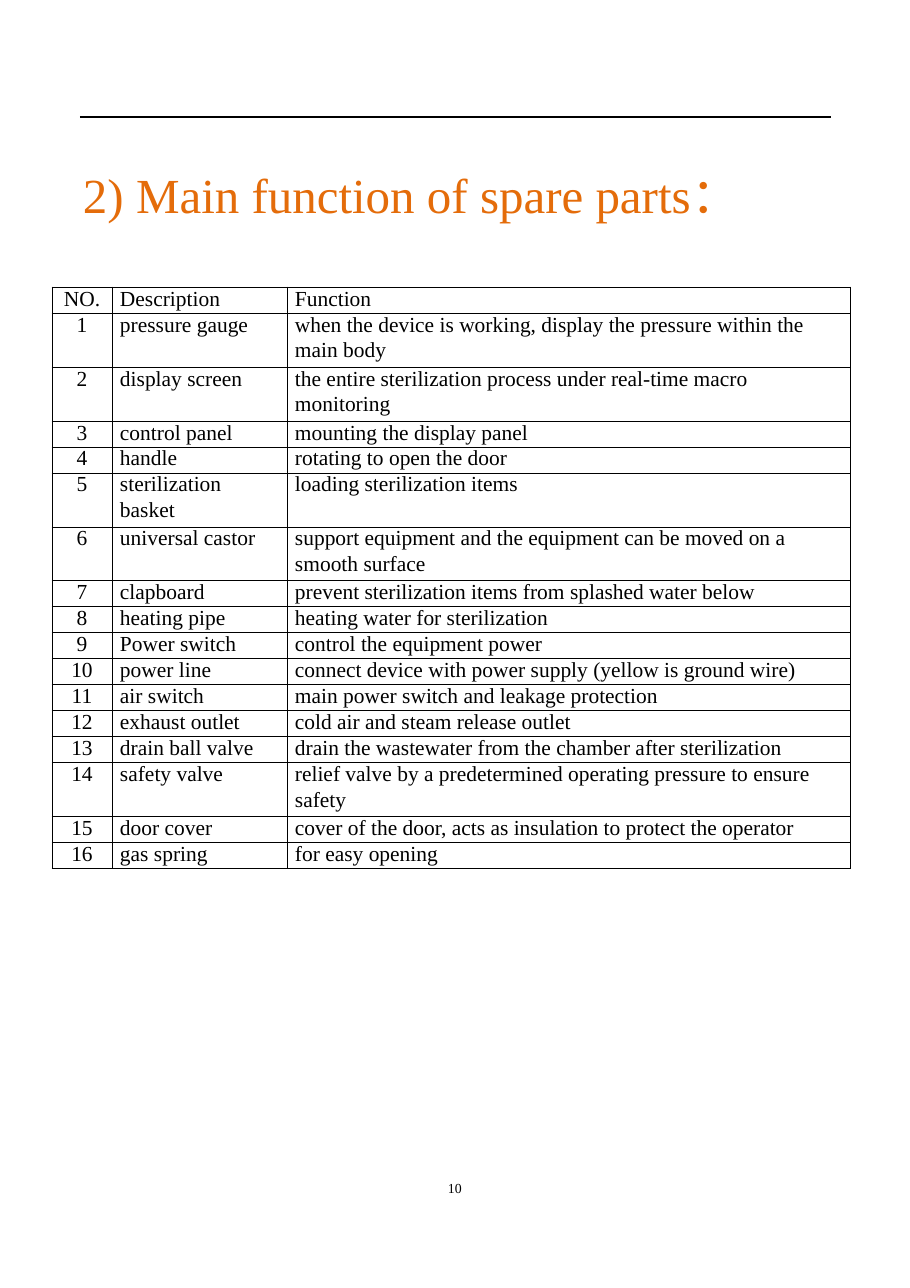
from dataclasses import dataclass
from lxml import etree
from pptx import Presentation
from pptx import util as u
from pptx.dml.color import RGBColor
from pptx.enum import shapes, text
from pptx.oxml.ns import qn


@dataclass(frozen=True)
class Theme:
    ink: RGBColor = RGBColor(0, 0, 0)
    accent: RGBColor = RGBColor(0xE4, 0x6C, 0x0A)
    serif: str = "Times New Roman"
    asian: str = "Noto Sans CJK SC"
    head: float = 32
    body: float = 14
    foot: float = 9
    rule: float = 0.7
    grid: float = 0.5


THEME = Theme()
SCALE = 8298
COLS = [60, 175, 563]
LINE, PAIR = 26, 54
PARTS = [
    ("NO.", "Description", "Function"),
    ("1", "pressure gauge",
     "when the device is working, display the pressure within the\nmain body"),
    ("2", "display screen",
     "the entire sterilization process under real-time macro\nmonitoring"),
    ("3", "control panel", "mounting the display panel"),
    ("4", "handle", "rotating to open the door"),
    ("5", "sterilization\nbasket", "loading sterilization items"),
    ("6", "universal castor",
     "support equipment and the equipment can be moved on a\nsmooth surface"),
    ("7", "clapboard", "prevent sterilization items from splashed water below"),
    ("8", "heating pipe", "heating water for sterilization"),
    ("9", "Power switch", "control the equipment power"),
    ("10", "power line", "connect device with power supply (yellow is ground wire)"),
    ("11", "air switch", "main power switch and leakage protection"),
    ("12", "exhaust outlet", "cold air and steam release outlet"),
    ("13", "drain ball valve", "drain the wastewater from the chamber after sterilization"),
    ("14", "safety valve",
     "relief valve by a predetermined operating pressure to ensure\nsafety"),
    ("15", "door cover", "cover of the door, acts as insulation to protect the operator"),
    ("16", "gas spring", "for easy opening"),
]


def px(n):
    return u.Emu(n * SCALE)


def add_run(para, words, size, color, face=THEME.serif):
    run = para.add_run()
    run.text = words
    run.font.size = u.Pt(size)
    run.font.color.rgb = color
    run.font.name = face
    etree.SubElement(run.font._element, qn("a:ea"), typeface=face)


def set_frame(frame, left, top):
    frame.margin_left, frame.margin_top = px(left), px(top)
    frame.margin_right = frame.margin_bottom = 0
    frame.vertical_anchor = text.MSO_ANCHOR.TOP
    frame.auto_size = text.MSO_AUTO_SIZE.NONE
    frame.word_wrap = True


def add_rule(slide, left, right, top):
    line = slide.shapes.add_connector(
        shapes.MSO_CONNECTOR.STRAIGHT, px(left), px(top), px(right), px(top))
    line.line.color.rgb = THEME.ink
    line.line.width = u.Pt(THEME.rule)
    etree.SubElement(line._element.spPr, qn("a:effectLst"))


def set_title(slide):
    title = slide.shapes.title
    title.left, title.top, title.width, title.height = map(px, (82, 164, 705, 61))
    set_frame(title.text_frame, 1, 1)
    para = title.text_frame.paragraphs[0]
    para.alignment = text.PP_ALIGN.LEFT
    para.space_before = u.Pt(1)
    add_run(para, "2) Main function of spare parts", THEME.head, THEME.accent)
    add_run(para, "：", THEME.head, THEME.accent, THEME.asian)


def add_page(slide, label):
    box = slide.shapes.add_textbox(*map(px, (444, 1180, 24, 19)))
    set_frame(box.text_frame, 4, 0)
    add_run(box.text_frame.paragraphs[0], label, THEME.foot, THEME.ink)


def add_edges(cell):
    props = cell._tc.get_or_add_tcPr()
    for place, side in enumerate(("lnL", "lnR", "lnT", "lnB")):
        edge = etree.Element(qn("a:" + side), w=str(u.Pt(THEME.grid)))
        fill = etree.SubElement(edge, qn("a:solidFill"))
        etree.SubElement(fill, qn("a:srgbClr"), val=str(THEME.ink))
        props.insert(place, edge)


def fill_cell(cell, words, align):
    cell.margin_left = px(0 if align == text.PP_ALIGN.CENTER else 8)
    cell.margin_right = cell.margin_top = cell.margin_bottom = 0
    cell.vertical_anchor = text.MSO_ANCHOR.TOP
    cell.fill.background()
    add_edges(cell)
    frame = cell.text_frame
    for i, line in enumerate(words.split("\n")):
        para = frame.add_paragraph() if i else frame.paragraphs[0]
        para.alignment = align
        para.space_before = u.Pt(1.2 if i else 0.2)
        add_run(para, line, THEME.body, THEME.ink)


def add_parts(slide, left, top):
    highs = [PAIR if any("\n" in words for words in row) else LINE for row in PARTS]
    table = slide.shapes.add_table(
        len(PARTS), len(COLS), px(left), px(top), px(sum(COLS)), px(sum(highs))).table
    table.first_row = table.horz_banding = False
    for col, wide in zip(table.columns, COLS):
        col.width = px(wide)
    for r, (row, high) in enumerate(zip(PARTS, highs)):
        table.rows[r].height = px(high)
        for c, words in enumerate(row):
            align = text.PP_ALIGN.LEFT if c else text.PP_ALIGN.CENTER
            fill_cell(table.cell(r, c), words, align)


def main():
    deck = Presentation()
    deck.slide_width, deck.slide_height = px(910), px(1288)
    slide = deck.slides.add_slide(deck.slide_layouts[5])
    add_rule(slide, 80, 831, 117)
    set_title(slide)
    add_page(slide, "10")
    add_parts(slide, 52, 287)
    deck.save("out.pptx")


if __name__ == "__main__":
    main()
